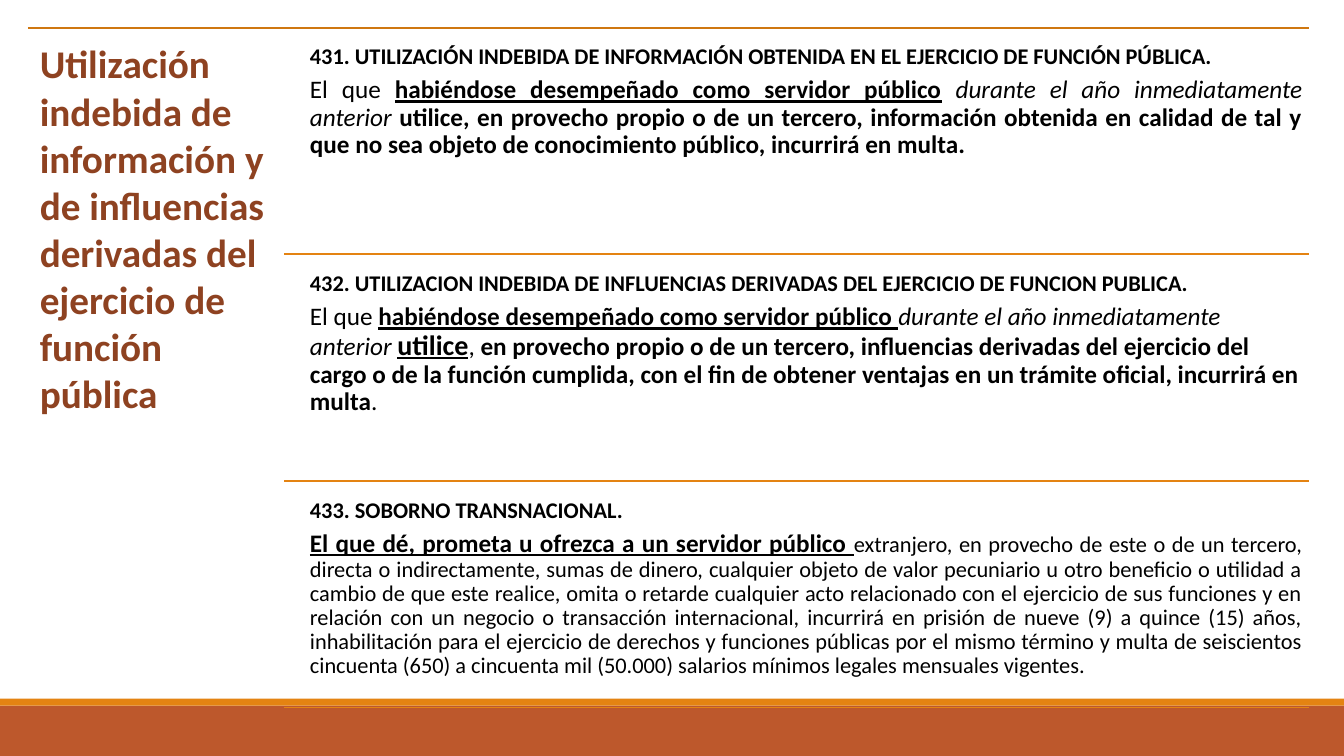
from lxml.etree import SubElement
from pptx import Presentation
from pptx.dml.color import RGBColor
from pptx.enum.shapes import MSO_CONNECTOR, MSO_SHAPE
from pptx.enum.text import MSO_ANCHOR, MSO_AUTO_SIZE, PP_ALIGN
from pptx.oxml.ns import qn
from pptx.util import Pt

COLORS = {"band": "BD582C", "accent": "E48312", "rule": "CF7710",
          "title": "8E4221", "text": "000000"}

PLAIN = {"size": Pt(18)}
BOLD = {"size": Pt(18), "bold": True}
ITALIC = {"size": Pt(18), "italic": True}
UNDER = {"size": Pt(18), "bold": True, "underline": True}
LARGE = {"size": Pt(20), "bold": True, "underline": True}
SMALL = {"size": Pt(16)}
HEAD = {"size": Pt(16), "bold": True}
TITLE = {"size": Pt(28), "bold": True}

TITLE_TEXT = ("Utilización indebida de información y de influencias "
              "derivadas del ejercicio de función pública")

ARTICLES = [
    ("431. UTILIZACIÓN INDEBIDA DE INFORMACIÓN OBTENIDA EN EL EJERCICIO DE FUNCIÓN PÚBLICA. ",
     PP_ALIGN.JUSTIFY,
     [("El que ", PLAIN),
      ("habiéndose desempeñado como servidor público", UNDER),
      (" ", PLAIN),
      ("durante el año inmediatamente anterior ", ITALIC),
      ("utilice, en provecho propio o de un tercero, información obtenida en calidad "
       "de tal y que no sea objeto de conocimiento público, incurrirá en multa.", BOLD)]),
    ("432. UTILIZACION INDEBIDA DE INFLUENCIAS DERIVADAS DEL EJERCICIO DE FUNCION PUBLICA. ",
     PP_ALIGN.LEFT,
     [("El que ", PLAIN),
      ("habiéndose desempeñado como servidor público ", UNDER),
      ("durante el año inmediatamente anterior ", ITALIC),
      ("utilice", LARGE),
      (", ", PLAIN),
      ("en provecho propio o de un tercero, influencias derivadas del ejercicio del "
       "cargo o de la función cumplida, con el fin de obtener ventajas en un trámite "
       "oficial, incurrirá en multa", BOLD),
      (".", PLAIN)]),
    ("433. SOBORNO TRANSNACIONAL.",
     PP_ALIGN.JUSTIFY,
     [("El que dé, prometa u ofrezca a un servidor público ", UNDER),
      ("extranjero, en provecho de este o de un tercero, directa o indirectamente, "
       "sumas de dinero, cualquier objeto de valor pecuniario u otro beneficio o "
       "utilidad a cambio de que este realice, omita o retarde cualquier acto "
       "relacionado con el ejercicio de sus funciones y en relación con un negocio o "
       "transacción internacional, incurrirá en prisión de nueve (9) a quince (15) "
       "años, inhabilitación para el ejercicio de derechos y funciones públicas por "
       "el mismo término y multa de seiscientos cincuenta (650) a cincuenta mil "
       "(50.000) salarios mínimos legales mensuales vigentes.", SMALL)]),
]


def rgb(name):
    return RGBColor.from_string(COLORS[name])


def set_frame(tf, inset):
    values = {"word_wrap": True, "auto_size": MSO_AUTO_SIZE.NONE,
              "vertical_anchor": MSO_ANCHOR.TOP}
    for side in ("left", "top", "right", "bottom"):
        values[f"margin_{side}"] = Pt(inset)
    for key, value in values.items():
        setattr(tf, key, value)


def fill_paragraph(p, runs, color, align=PP_ALIGN.LEFT, spacing=1.0, after=0):
    layout = {"alignment": align, "line_spacing": spacing,
              "space_before": Pt(0), "space_after": Pt(after)}
    for key, value in layout.items():
        setattr(p, key, value)
    for text, style in runs:
        r = p.add_run()
        r.text = text
        font = {"name": "Calibri", "bold": False, **style}
        for key, value in font.items():
            setattr(r.font, key, value)
        r.font.color.rgb = rgb(color)


def add_rule(s, left, right, y, color):
    line = s.shapes.add_connector(MSO_CONNECTOR.STRAIGHT, Pt(left), Pt(y), Pt(right), Pt(y))
    line.line.color.rgb = rgb(color)
    line.line.width = Pt(1.25)
    SubElement(line._element.spPr, qn("a:effectLst"))


def add_footer(s, left, top, width, height, color):
    sp = s.shapes.add_shape(MSO_SHAPE.RECTANGLE, Pt(left), Pt(top), Pt(width), Pt(height))
    sp.shadow.inherit = False
    sp.fill.solid()
    sp.fill.fore_color.rgb = rgb(color)
    sp.line.fill.background()


def add_title(s, left, top, width, height):
    sp = s.shapes.title
    box = {"left": left, "top": top, "width": width, "height": height}
    for key, value in box.items():
        setattr(sp, key, Pt(value))
    set_frame(sp.text_frame, 8.4)
    fill_paragraph(sp.text_frame.paragraphs[0], [(TITLE_TEXT, TITLE)], "title")


def add_article(s, left, top, width, height, article):
    heading, align, body = article
    indent = 13.6
    sp = s.shapes.add_textbox(Pt(left + indent), Pt(top), Pt(width - indent), Pt(height))
    tf = sp.text_frame
    set_frame(tf, 4.8)
    fill_paragraph(tf.paragraphs[0], [(heading, HEAD)], "text", spacing=0.9, after=5.6)
    fill_paragraph(tf.add_paragraph(), body, "text", align, 0.9, 6.3)
    add_rule(s, left, left + width, top + height, "accent")


def main():
    prs = Presentation()
    prs.slide_width, prs.slide_height = Pt(960), Pt(540)
    s = prs.slides.add_slide(prs.slide_layouts[5])
    add_footer(s, 0, 504, 960, 36, "band")
    add_footer(s, 0, 499, 960, 5, "accent")
    add_rule(s, 20, 935.2, 20, "rule")
    add_title(s, 20, 20, 183, 493)
    for i, article in enumerate(ARTICLES):
        add_article(s, 203, 27.4 + 162 * i, 732.2, 154, article)
    prs.save("out.pptx")


if __name__ == "__main__":
    main()
